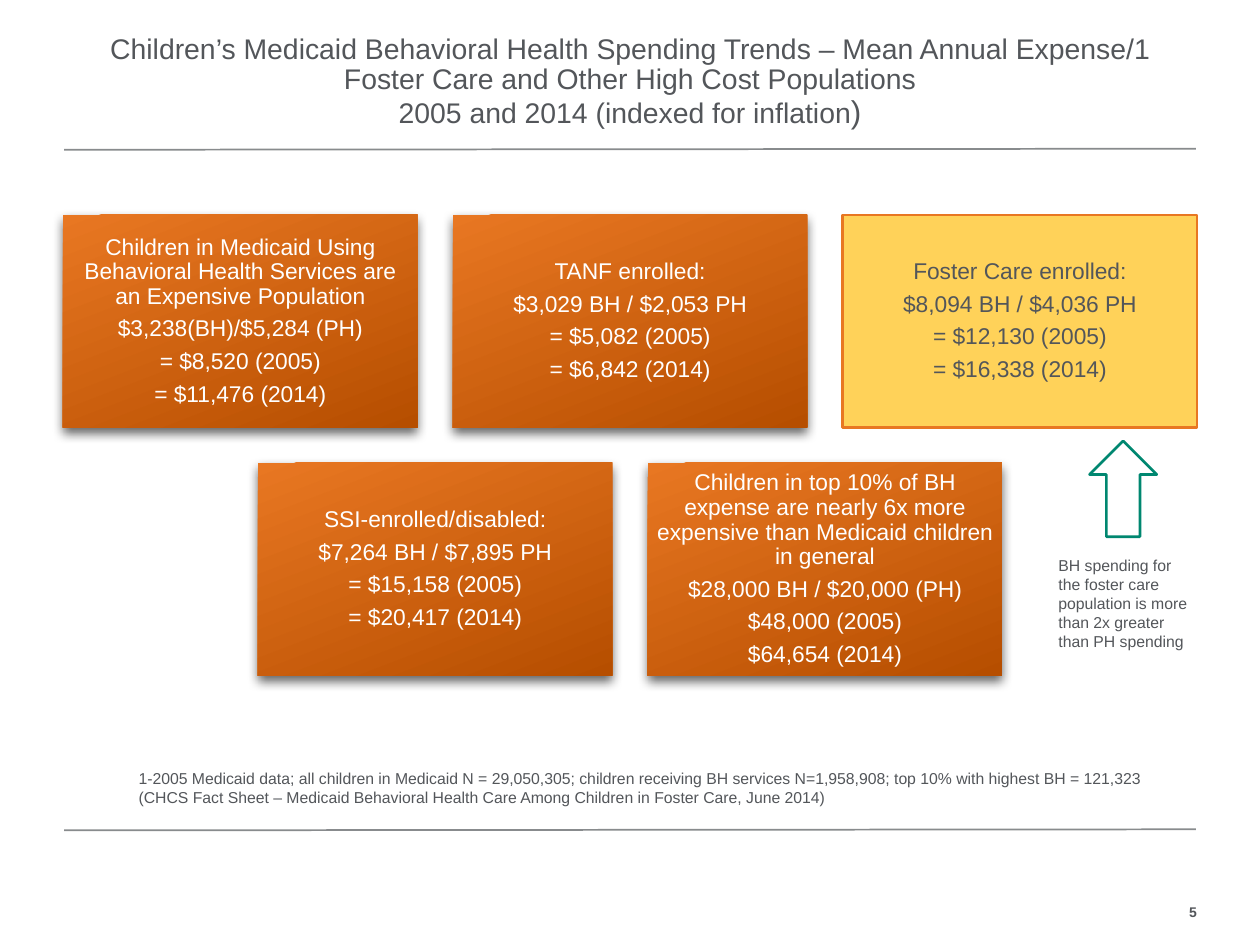
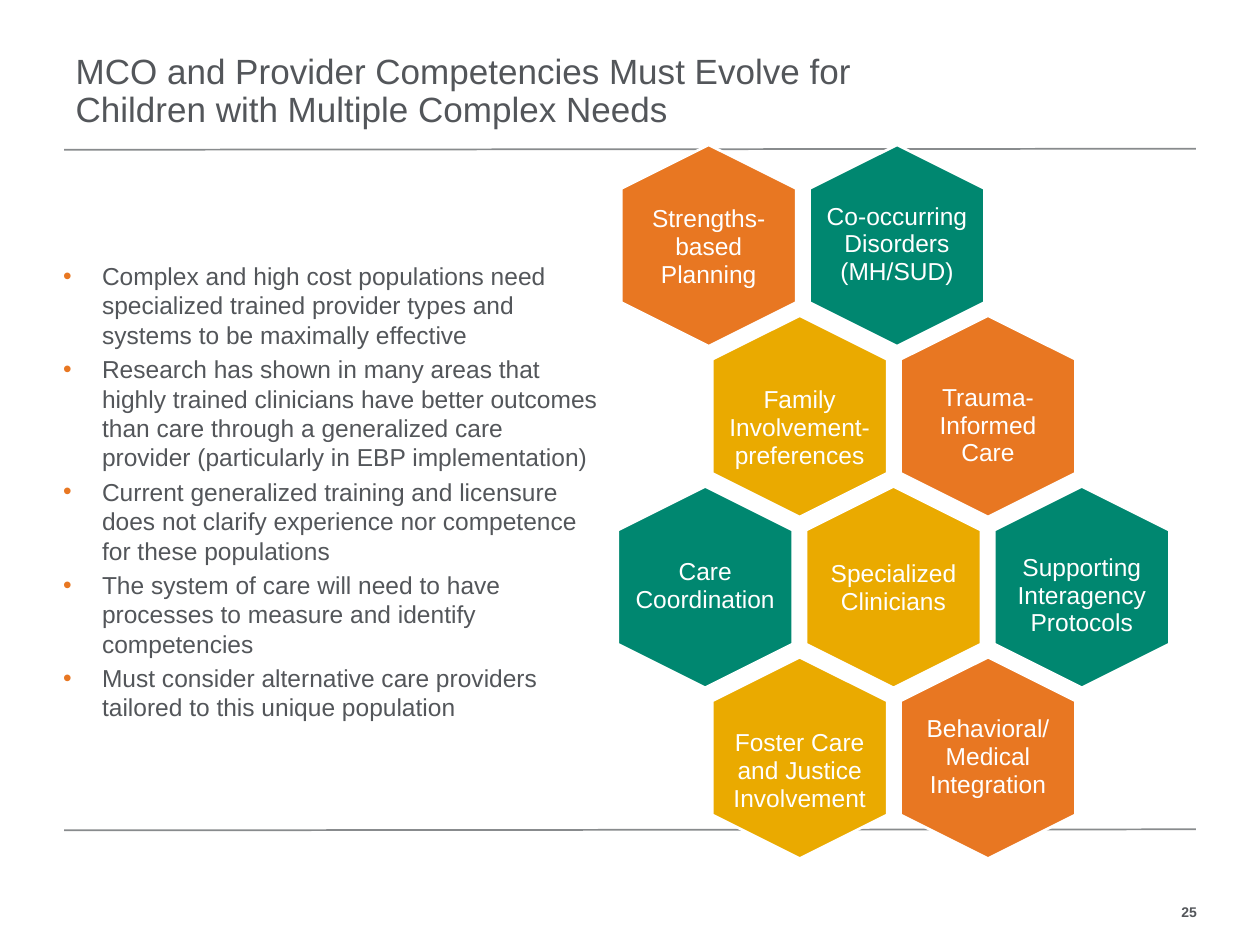
from lxml import etree
from pptx import Presentation
from pptx.dml.color import RGBColor
from pptx.enum import shapes, text
from pptx.oxml import ns
from pptx.util import Pt

FONT = "Arial"
GRAY, RULE, WHITE = "53565A", "888B8D", "FFFFFF"
ORANGE, RUST, YELLOW, GOLD, GREEN = "E87722", "B64E00", "FFD259", "EAAA00", "008770"
LEFT, CENTER, RIGHT = text.PP_ALIGN.LEFT, text.PP_ALIGN.CENTER, text.PP_ALIGN.RIGHT
TOP, MIDDLE, BOTTOM = text.MSO_ANCHOR.TOP, text.MSO_ANCHOR.MIDDLE, text.MSO_ANCHOR.BOTTOM

SLIDE_WIDTH, SLIDE_HEIGHT = 720, 540
MARGIN = 36
RULE_TOPS = [85.3, 474.2]

SPENDING_TITLE = (
    "Children’s Medicaid Behavioral Health Spending Trends – Mean Annual Expense/1\v"
    "Foster Care and Other High Cost Populations\v"
    "2005 and 2014 (indexed for inflation"
)
CARD_ROWS = [
    [
        ["Children in Medicaid Using Behavioral Health Services are an Expensive Population",
         "$3,238(BH)/$5,284 (PH)", "= $8,520 (2005)", "= $11,476 (2014)"],
        ["TANF enrolled:", "$3,029 BH / $2,053 PH", "= $5,082 (2005)", "= $6,842 (2014)"],
        ["Foster Care enrolled:", "$8,094 BH / $4,036 PH", "= $12,130 (2005)", "= $16,338 (2014)"],
    ],
    [
        ["SSI-enrolled/disabled:", "$7,264 BH / $7,895 PH", "= $15,158 (2005)", "= $20,417 (2014)"],
        ["Children in top 10% of BH expense are nearly 6x more expensive than Medicaid "
         "children in general",
         "$28,000 BH / $20,000 (PH)", "$48,000 (2005)", "$64,654 (2014)"],
    ],
]
HIGHLIGHTED = "Foster Care enrolled:"
SOURCE_NOTE = [
    "1-2005 Medicaid data; all children in Medicaid N = 29,050,305; children receiving BH "
    "services N=1,958,908; top 10% with highest BH = 121,323",
    "(CHCS Fact Sheet – Medicaid Behavioral Health Care Among Children in Foster Care, June 2014)",
]
ARROW_NOTE = ["BH spending for", "the foster care", "population is more",
              "than 2x greater", "than PH spending"]

COMPETENCY_TITLE = ("MCO and Provider Competencies Must Evolve for "
                    "Children with Multiple Complex Needs")
BULLETS = [
    "Complex and high cost populations need specialized trained provider types and systems "
    "to be maximally effective",
    "Research has shown in many areas that highly trained clinicians have better outcomes than "
    "care through a generalized care provider (particularly in EBP implementation)",
    "Current generalized training and licensure does not clarify experience nor competence "
    "for these populations",
    "The system of care will need to have processes to measure and identify competencies",
    "Must consider alternative care providers tailored to this unique population",
]
HEXAGON_ROWS = [
    (355, [("Strengths-based Planning", ORANGE, 34.6),
           ("Co-occurring Disorders (MH/SUD)", GREEN, 33)]),
    (407, [("Family Involvement-preferences", GOLD, 40.3),
           ("Trauma-Informed Care", ORANGE, 38.9)]),
    (353, [("Care Coordination", GREEN, 41),
           ("Specialized Clinicians", GOLD, 42),
           ("Supporting Interagency Protocols", GREEN, 38.4)]),
    (407, [("Foster Care and Justice Involvement", GOLD, 41),
           ("Behavioral/ Medical Integration", ORANGE, 33)]),
]


def color(value):
    return RGBColor.from_string(value)


def points(*values):
    return [Pt(value) for value in values]


def add_element(parent, tag, **attributes):
    return etree.SubElement(parent, ns.qn(tag), attributes)


def write(shape, lines, size, fill=GRAY, align=LEFT, anchor=TOP, insets=(0, 0, 0, 0),
          spacing=None, before=0, after=0, bold=False):
    frame = shape.text_frame
    frame.text = "\n".join(lines)
    frame.word_wrap = True
    frame.auto_size = text.MSO_AUTO_SIZE.NONE
    frame.vertical_anchor = anchor
    (frame.margin_left, frame.margin_top,
     frame.margin_right, frame.margin_bottom) = points(*insets)
    for index, paragraph in enumerate(frame.paragraphs):
        paragraph.alignment = align
        paragraph.line_spacing = spacing
        paragraph.space_before = Pt(before if index else 0)
        paragraph.space_after = Pt(after)
        for run in paragraph.runs:
            style_run(run, size, fill, bold)


def style_run(run, size, fill=GRAY, bold=False):
    run.font.name = FONT
    run.font.size = Pt(size)
    run.font.bold = bold
    run.font.color.rgb = color(fill)


def add_text(slide, box, lines, size, **style):
    shape = slide.shapes.add_textbox(*points(*box))
    write(shape, lines, size, **style)
    return shape


def paint(shape, fill, line=None):
    shape.shadow.inherit = False
    shape.fill.solid()
    shape.fill.fore_color.rgb = color(fill)
    if line:
        shape.line.color.rgb = color(line)
        shape.line.width = Pt(1.5)
    else:
        shape.line.fill.background()


def add_glow_and_gradient(shape):
    shape.fill.gradient()
    shape.fill.gradient_angle = 291
    for stop, shade in zip(shape.fill.gradient_stops, (ORANGE, RUST)):
        stop.color.rgb = color(shade)
    effects = shape._element.spPr.find(ns.qn("a:effectLst"))
    shadow = add_element(effects, "a:outerShdw", blurRad=str(Pt(6)), dist=str(Pt(3)),
                         dir="5400000", rotWithShape="0")
    shade = add_element(shadow, "a:srgbClr", val="000000")
    add_element(shade, "a:alpha", val="60000")


def start_slide(presentation, title, box, size, number, align=LEFT):
    slide = presentation.slides.add_slide(presentation.slide_layouts[5])
    for top in RULE_TOPS:
        rule = slide.shapes.add_connector(
            shapes.MSO_CONNECTOR.STRAIGHT,
            *points(MARGIN + 0.7, top + 0.3, SLIDE_WIDTH - MARGIN - 0.7, top - 0.3))
        rule.line.color.rgb = color(RULE)
        rule.line.width = Pt(1)
        add_element(rule._element.spPr, "a:effectLst")
    heading = slide.shapes.title
    heading.left, heading.top, heading.width, heading.height = points(*box)
    write(heading, [title], size, align=align, anchor=BOTTOM,
          insets=(7.2, 3.6, 7.2, 3.6), spacing=0.9)
    add_text(slide, (648, 512.6, 36, 16.6), [str(number)], 8,
             align=RIGHT, anchor=MIDDLE, bold=True)
    return slide


def add_cards(slide):
    width, height, gap, first_top = 202.5, 121.5, 20.25, 122.8
    for row, cards in enumerate(CARD_ROWS):
        row_width = len(cards) * (width + gap) - gap
        row_left = (SLIDE_WIDTH - row_width) / 2
        for column, lines in enumerate(cards):
            card = slide.shapes.add_shape(
                shapes.MSO_SHAPE.RECTANGLE,
                *points(row_left + column * (width + gap),
                        first_top + row * (height + gap), width, height))
            highlighted = lines[0] == HIGHLIGHTED
            paint(card, YELLOW, ORANGE if highlighted else None)
            if not highlighted:
                add_glow_and_gradient(card)
            write(card, lines, 13, GRAY if highlighted else WHITE, CENTER, MIDDLE,
                  insets=(3.6, 3.6, 3.6, 3.6), spacing=0.9, after=4.55)


def add_hexagons(slide):
    width, height, shoulder = 100, 115, 25
    column_step, row_step, first_top = 107.6, 97.6, 82.8
    outline = [(width / 2, 0), (width, shoulder), (width, height - shoulder),
               (width / 2, height), (0, height - shoulder), (0, shoulder)]
    for row, (left, hexagons) in enumerate(HEXAGON_ROWS):
        top = first_top + row * row_step
        for column, (label, fill, label_top) in enumerate(hexagons):
            corners = [points(left + column * column_step + x, top + y) for x, y in outline]
            builder = slide.shapes.build_freeform(*corners[0])
            builder.add_line_segments(corners[1:], close=True)
            hexagon = builder.convert_to_shape()
            paint(hexagon, fill, WHITE)
            write(hexagon, [label], 14, WHITE, CENTER,
                  insets=(7.2, label_top, 7.2, 0), spacing=0.95)


def add_bullets(slide):
    box = add_text(slide, (MARGIN, 75.6, 306, 410.4), BULLETS, 14, anchor=MIDDLE, before=2.8)
    for paragraph in box.text_frame.paragraphs:
        properties = paragraph._p.get_or_add_pPr()
        properties.set("marL", str(Pt(22.3)))
        properties.set("indent", str(Pt(-22.3)))
        bullet_color = add_element(properties, "a:buClr")
        add_element(bullet_color, "a:srgbClr", val=ORANGE)
        add_element(properties, "a:buFont", typeface=FONT)
        add_element(properties, "a:buChar", char="•")


def build_spending_slide(presentation):
    slide = start_slide(presentation, SPENDING_TITLE, (MARGIN, 21.6, 648, 56.2), 16.2, 5, CENTER)
    closing = slide.shapes.title.text_frame.paragraphs[0].add_run()
    closing.text = ")"
    style_run(closing, 18)
    add_cards(slide)
    add_text(slide, (79.2, 439.2, 604.8, 26), SOURCE_NOTE, 9)
    arrow = slide.shapes.add_shape(shapes.MSO_SHAPE.UP_ARROW, *points(622.6, 252, 38.4, 54.7))
    paint(arrow, WHITE, GREEN)
    add_text(slide, (604.8, 317.5, 90, 60), ARROW_NOTE, 9)


def build_competency_slide(presentation):
    slide = start_slide(presentation, COMPETENCY_TITLE, (MARGIN, 18, 478.8, 59.8), 20, 25)
    add_bullets(slide)
    add_hexagons(slide)


def main():
    presentation = Presentation()
    presentation.slide_width, presentation.slide_height = points(SLIDE_WIDTH, SLIDE_HEIGHT)
    build_spending_slide(presentation)
    build_competency_slide(presentation)
    presentation.save("out.pptx")


if __name__ == "__main__":
    main()
